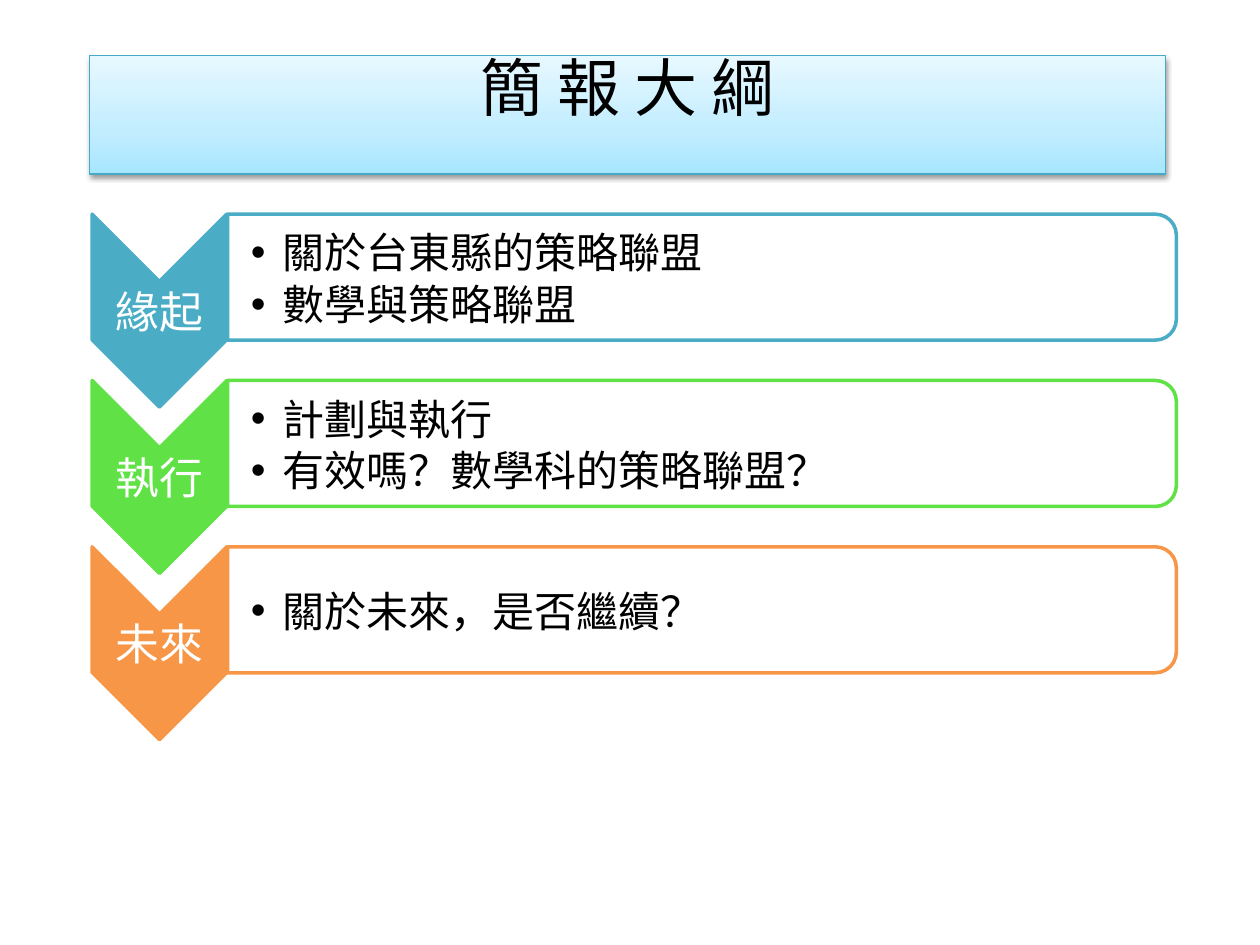
import copy

import lxml.etree
import pptx
import pptx.dml.color
import pptx.enum.shapes
import pptx.enum.text
import pptx.oxml
import pptx.oxml.ns
import pptx.util

Pt = pptx.util.Pt
qn = pptx.oxml.ns.qn
SHAPES = pptx.enum.shapes.MSO_SHAPE
ALIGN = pptx.enum.text.PP_ALIGN
ANCHOR = pptx.enum.text.MSO_ANCHOR
FONT = "Noto Sans CJK JP"


def rgb(value):
    return pptx.dml.color.RGBColor.from_string(value)


def set_text(frame, text, size, color, align, spacing, anchor, insets):
    frame.text = text
    frame.word_wrap = True
    frame.auto_size = pptx.enum.text.MSO_AUTO_SIZE.NONE
    frame.vertical_anchor = anchor
    frame.margin_left, frame.margin_top, frame.margin_right, frame.margin_bottom = map(Pt, insets)
    for paragraph in frame.paragraphs:
        paragraph.alignment = align
        paragraph.line_spacing = spacing
        for run in paragraph.runs:
            run.font.name = FONT
            run.font.size = Pt(size)
            run.font.color.rgb = rgb(color)
            east_asian = lxml.etree.SubElement(run.font._element, qn("a:ea"))
            east_asian.set("typeface", FONT)


deck = pptx.Presentation()
deck.slide_width, deck.slide_height = Pt(720), Pt(540)
slide = deck.slides.add_slide(deck.slide_layouts[5])

title = slide.shapes.title
title.left, title.top, title.width, title.height = Pt(51.12), Pt(31.7), Pt(614.9), Pt(67.7)
title_properties = title._element.spPr
rounded = pptx.oxml.parse_xml(
    f'<a:prstGeom {pptx.oxml.ns.nsdecls("a")} prst="roundRect"><a:avLst/></a:prstGeom>'
)
title_properties.find(qn("a:xfrm")).addnext(rounded)
title.fill.gradient()
title.fill.gradient_angle = 90
stop_list = title_properties.find(qn("a:gradFill")).find(qn("a:gsLst"))
stop_list.insert(1, copy.deepcopy(stop_list[0]))
stops = [(0, "A7E6FF"), (0.35, "C1EDFF"), (1, "E7F8FF")]
for stop, (position, color) in zip(title.fill.gradient_stops, stops):
    stop.position = position
    stop.color.rgb = rgb(color)
title.line.color.rgb = rgb("46AAC5")
title.line.width = Pt(0.75)
title_properties.append(pptx.oxml.parse_xml(
    f'<a:effectLst {pptx.oxml.ns.nsdecls("a")}>'
    '<a:outerShdw blurRad="40000" dist="20000" dir="5400000" rotWithShape="0">'
    '<a:srgbClr val="000000"><a:alpha val="38000"/></a:srgbClr>'
    '</a:outerShdw></a:effectLst>'
))
set_text(title.text_frame, "簡 報 大 綱", 36, "000000", ALIGN.CENTER, 0.93,
         ANCHOR.TOP, (7.2, 0, 7.2, 0))

sections = [
    ("緣起", "4BACC6", ["關於台東縣的策略聯盟", "數學與策略聯盟"]),
    ("執行", "60E146", ["計劃與執行", "有效嗎？數學科的策略聯盟？"]),
    ("未來", "F79646", ["關於未來，是否繼續？"]),
]
ROW_STEP = 95.04
for index, (heading, color, points) in enumerate(sections):
    panel_middle = 158.4 + index * ROW_STEP
    arrow_middle = 177.5 + index * ROW_STEP

    arrow = slide.shapes.add_shape(
        SHAPES.CHEVRON, Pt(36), Pt(arrow_middle - 38.5), Pt(110.2), Pt(77))
    panel = slide.shapes.add_shape(
        SHAPES.ROUND_2_SAME_RECTANGLE, Pt(365.1), Pt(panel_middle - 271.1), Pt(72), Pt(542.2))
    for outline, fill in ((arrow, color), (panel, "FFFFFF")):
        outline.rotation = 90
        outline.shadow.inherit = False
        outline.fill.solid()
        outline.fill.fore_color.rgb = rgb(fill)
        outline.line.color.rgb = rgb(color)
        outline.line.width = Pt(2)

    label = slide.shapes.add_textbox(Pt(52.6), Pt(arrow_middle - 16.5), Pt(77), Pt(33))
    set_text(label.text_frame, heading, 25, "FFFFFF", ALIGN.CENTER, Pt(30),
             ANCHOR.MIDDLE, (1.5, 1.5, 1.5, 1.5))

    details = slide.shapes.add_textbox(Pt(129.6), Pt(panel_middle - 32.4), Pt(538.6), Pt(64.8))
    set_text(details.text_frame, "\n".join(points), 24, "000000", ALIGN.LEFT, Pt(29.5),
             ANCHOR.MIDDLE, (13.7, 1.5, 1.5, 1.5))
    for paragraph in details.text_frame.paragraphs:
        properties = paragraph._p.get_or_add_pPr()
        properties.set("marL", str(Pt(18)))
        properties.set("indent", str(-Pt(18)))
        lxml.etree.SubElement(properties, qn("a:buFont")).set("typeface", "Arial")
        lxml.etree.SubElement(properties, qn("a:buChar")).set("char", "•")

deck.save("out.pptx")
